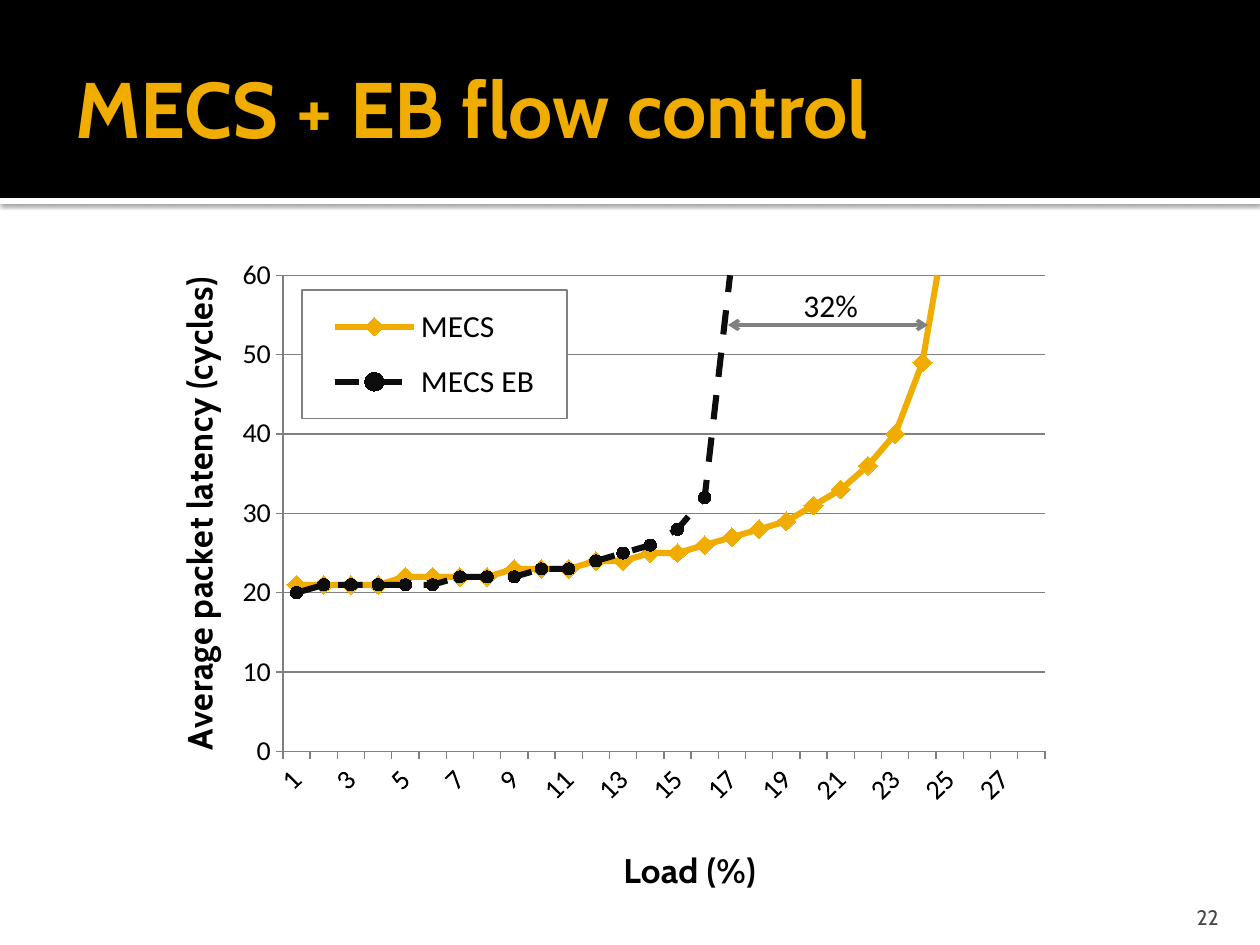
from lxml import etree
from pptx import Presentation
from pptx import util as u
from pptx.chart.data import CategoryChartData
from pptx.dml.color import RGBColor
from pptx.enum import chart as ch, dml, shapes, text
from pptx.oxml import parse_xml
from pptx.oxml.ns import nsdecls, qn

SCALE = u.Inches(1) // 126  # EMU per px

BLACK = RGBColor(0x00, 0x00, 0x00)
WHITE = RGBColor(0xFF, 0xFF, 0xFF)
GOLD = RGBColor(0xF0, 0xAD, 0x00)
INK = RGBColor(0x0D, 0x0D, 0x0D)
GRAY = RGBColor(0x80, 0x80, 0x80)
DARK_GRAY = RGBColor(0x45, 0x45, 0x45)

CHART_BOX = (147, 252, 914, 651)
MECS = [21, 21, 21, 21, 22, 22, 22, 22, 23, 23, 23, 24, 24, 25,
        25, 26, 27, 28, 29, 31, 33, 36, 40, 49, 69, 176, 451, 853]
MECS_EB = [20, 21, 21, 21, 21, 21, 22, 22, 22, 23, 23, 24, 25, 26,
           28, 32, 62, 196, 429, 797, 1309, 1865, 2423, 3011, 3621, 4213, 4795, 5389]


def px(*lengths):
    return [u.Emu(n * SCALE) for n in lengths]


def set_font(font, size, color=BLACK, name="Calibri", bold=False):
    font.size, font.name, font.bold = u.Pt(size), name, bold
    font.color.rgb = color


def write(frame, words, size, color, name="Calibri", bold=False, align=None):
    paragraph = frame.paragraphs[0]
    paragraph.alignment = align
    run = paragraph.add_run()
    run.text = words
    set_font(run.font, size, color, name, bold)


def add_label(slide, box, words, size, color, **style):
    frame = slide.shapes.add_textbox(*px(*box)).text_frame
    frame.word_wrap = True
    write(frame, words, size, color, **style)
    return frame


def add_band(slide, box, color, shadowed=False):
    band = slide.shapes.add_shape(shapes.MSO_SHAPE.RECTANGLE, *px(*box))
    band.shadow.inherit = False
    band.fill.solid()
    band.fill.fore_color.rgb = color
    band.line.fill.background()
    if shadowed:
        effects = band._element.spPr.find(qn("a:effectLst"))
        effects.append(parse_xml(
            f'<a:outerShdw {nsdecls("a")} blurRad="31750" dist="10160" dir="5400000">'
            '<a:srgbClr val="000000"><a:alpha val="60000"/></a:srgbClr></a:outerShdw>'))


def add_title(slide, words):
    title = slide.shapes.title
    title.left, title.top, title.width, title.height = px(63, 21, 1134, 173)
    frame = title.text_frame
    frame.vertical_anchor = text.MSO_ANCHOR.MIDDLE
    frame.margin_right = u.Inches(0.05)
    write(frame, words, 45, GOLD, "Cabin", True, text.PP_ALIGN.LEFT)


def place(part, before, left, top, width=None, height=None, inner=False):
    """Put a chart part at a slide position in px, its layout just ahead of `before`."""
    for old in part.findall(qn("c:layout")):
        part.remove(old)
    chart_left, chart_top, chart_width, chart_height = CHART_BOX
    fractions = {"x": (left - chart_left) / chart_width,
                 "y": (top - chart_top) / chart_height}
    if width:
        fractions.update(w=width / chart_width, h=height / chart_height)
    layout = etree.Element(qn("c:layout"))
    manual = etree.SubElement(layout, qn("c:manualLayout"))
    if inner:
        etree.SubElement(manual, qn("c:layoutTarget"), val="inner")
    for mode in ("c:xMode", "c:yMode"):
        etree.SubElement(manual, qn(mode), val="edge")
    for key, value in fractions.items():
        etree.SubElement(manual, qn(f"c:{key}"), val=f"{value:.4f}")
    part.find(qn(before)).addprevious(layout)


def style_axis(axis, title, left, top, rotation=None):
    axis.major_tick_mark = ch.XL_TICK_MARK.OUTSIDE
    axis.minor_tick_mark = ch.XL_TICK_MARK.NONE
    set_font(axis.tick_labels.font, 16)
    axis.format.line.color.rgb = GRAY
    frame = axis.axis_title.text_frame
    write(frame, title, 20, BLACK, "Cabin", True)
    place(axis.axis_title._element, "c:overlay", left, top)
    if rotation:
        body = frame._txBody.bodyPr
        body.set("rot", str(rotation * 60000))
        body.set("vert", "horz")


def style_series(series, color, marker, marker_size, dash=None):
    series.smooth = False
    line = series.format.line
    line.color.rgb, line.width = color, u.Pt(3.5)
    if dash:
        line.dash_style = dash
    series.marker.style, series.marker.size = marker, marker_size
    series.marker.format.fill.solid()
    series.marker.format.fill.fore_color.rgb = color
    series.marker.format.line.fill.background()


def add_latency_chart(slide):
    data = CategoryChartData(number_format="0")
    data.categories = [str(load) for load in range(1, len(MECS) + 1)]
    data.add_series("MECS", MECS)
    data.add_series("MECS EB", MECS_EB)
    chart = slide.shapes.add_chart(
        ch.XL_CHART_TYPE.LINE_MARKERS, *px(*CHART_BOX), data).chart
    set_font(chart.font, 10, name="Cabin")
    chart.has_title = False
    plot = chart.plots[0]
    plot.vary_by_categories = False
    place(chart._chartSpace.chart.plotArea, "c:lineChart", 283, 276, 762, 489, inner=True)

    mecs, mecs_eb = plot.series
    style_series(mecs, GOLD, ch.XL_MARKER_STYLE.DIAMOND, 11)
    style_series(mecs_eb, INK, ch.XL_MARKER_STYLE.CIRCLE, 7, dml.MSO_LINE.DASH)

    # Axes: every second load is labelled, at a slant
    load, latency = chart.category_axis, chart.value_axis
    style_axis(load, "Load (%)", 617, 856)
    style_axis(latency, "Average packet latency (cycles)", 168, 284, rotation=-90)
    load._element.txPr.find(qn("a:bodyPr")).set("rot", str(-45 * 60000))
    skip = etree.Element(qn("c:tickLblSkip"), val="2")
    load._element.find(qn("c:noMultiLvlLbl")).addprevious(skip)
    latency.minimum_scale, latency.maximum_scale, latency.major_unit = 0, 60, 10
    latency.tick_labels.number_format = "0"
    latency.tick_labels.number_format_is_linked = False
    latency.has_major_gridlines = True
    latency.major_gridlines.format.line.color.rgb = GRAY

    # Legend lies over the plot
    chart.has_legend = True
    legend = chart.legend
    legend.position = ch.XL_LEGEND_POSITION.RIGHT
    legend.include_in_layout = True
    set_font(legend.font, 18)
    place(legend._element, "c:overlay", 302, 291, 265, 132)
    legend._element.find(qn("c:txPr")).addprevious(parse_xml(
        f'<c:spPr {nsdecls("c", "a")}><a:solidFill><a:srgbClr val="{WHITE}"/></a:solidFill>'
        f'<a:ln w="9525"><a:solidFill><a:srgbClr val="{GRAY}"/></a:solidFill></a:ln></c:spPr>'))


def add_gap_arrow(slide, x1, x2, y):
    arrow = slide.shapes.add_connector(
        shapes.MSO_CONNECTOR.STRAIGHT, *px(x1, y, x2, y))
    arrow.line.color.rgb, arrow.line.width = GRAY, u.Pt(2)
    line_xml = arrow.line._get_or_add_ln()
    for end in ("a:headEnd", "a:tailEnd"):
        etree.SubElement(line_xml, qn(end), type="arrow")
    etree.SubElement(arrow._element.spPr, qn("a:effectLst"))


def main():
    deck = Presentation()
    deck.slide_width, deck.slide_height = px(1260, 945)
    slide = deck.slides.add_slide(deck.slide_layouts[5])

    # Header bands, behind the title
    add_band(slide, (0, 198, 1260, 6), WHITE, shadowed=True)
    add_band(slide, (0, 0, 1260, 198), BLACK)
    slide.shapes._spTree.append(slide.shapes.title._element)
    add_title(slide, "MECS + EB flow control")

    # Slide number
    number = add_label(slide, (1130, 892, 101, 38), "22", 12, DARK_GRAY,
                       name="Cabin", align=text.PP_ALIGN.RIGHT)
    number.vertical_anchor = text.MSO_ANCHOR.BOTTOM
    number.margin_bottom = 0

    # Chart and the gap between the two curves
    add_latency_chart(slide)
    add_gap_arrow(slide, 728, 928, 325)
    add_label(slide, (791, 280, 95, 50), "32%", 18, BLACK)

    deck.save("out.pptx")


if __name__ == "__main__":
    main()
